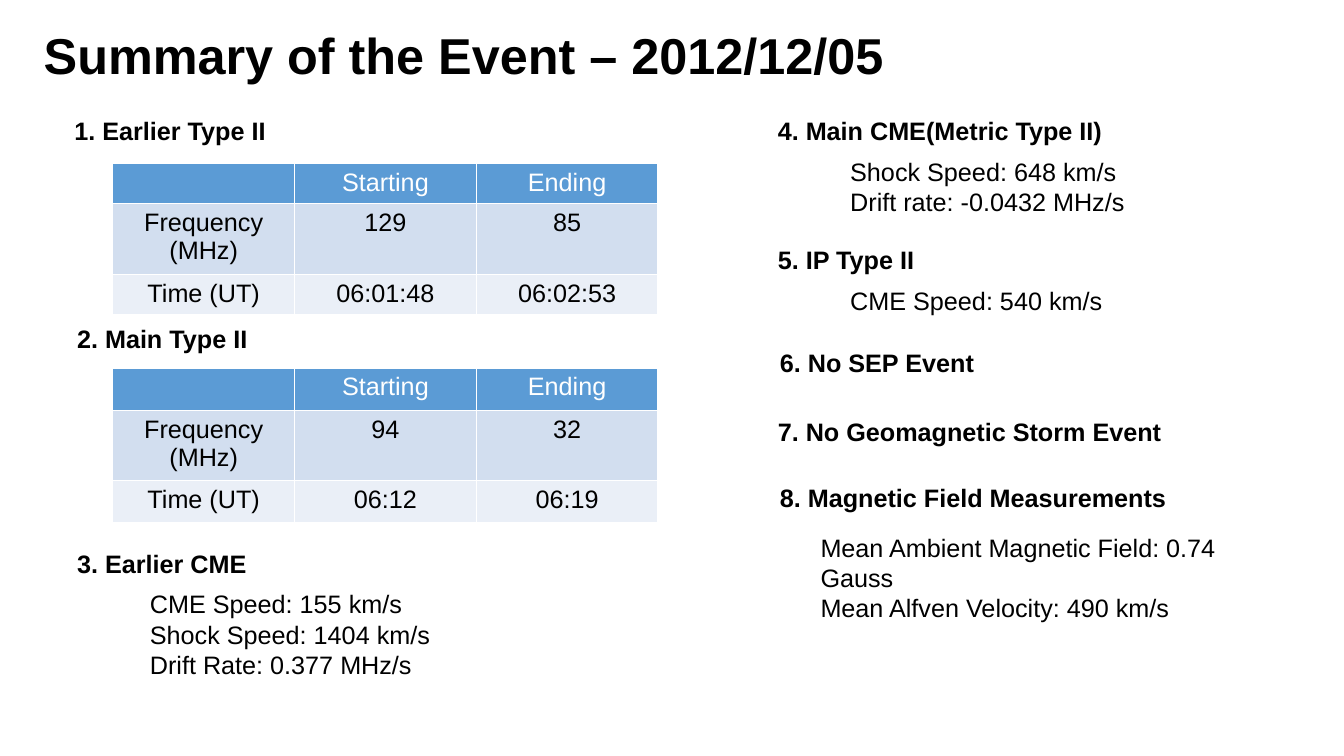
"""Build the event summary slide with its two measurement tables."""
from dataclasses import dataclass

from pptx import Presentation
from pptx.dml.color import RGBColor
from pptx.enum.text import MSO_ANCHOR, MSO_AUTO_SIZE, PP_ALIGN
from pptx.util import Pt

TOP = MSO_ANCHOR.TOP
GROW = MSO_AUTO_SIZE.SHAPE_TO_FIT_TEXT
LEFT = PP_ALIGN.LEFT
CENTER = PP_ALIGN.CENTER
TITLE_ONLY = 5


@dataclass(frozen=True)
class Theme:
    """Colours, font and type sizes of the slide."""
    font: str = "Arial"
    title_size: float = 36
    body_size: float = 18
    ink: RGBColor = RGBColor(0, 0, 0)
    header_ink: RGBColor = RGBColor(255, 255, 255)
    row_fills: tuple = (
        RGBColor(0x5B, 0x9B, 0xD5),
        RGBColor(0xD2, 0xDE, 0xEF),
        RGBColor(0xEA, 0xEF, 0xF7),
    )


class SummaryPage:
    """Place styled elements on one slide, with lengths in points."""

    def __init__(self, deck, theme):
        self.theme = theme
        self.page = deck.slides.add_slide(deck.slide_layouts[TITLE_ONLY])

    def style(self, frame, size, bold, color, align):
        """Format every run of a text frame."""
        for para in frame.paragraphs:
            para.alignment = align
            for span in para.runs:
                span.font.name = self.theme.font
                span.font.size = Pt(size)
                span.font.bold = bold
                span.font.color.rgb = color

    def fill_box(self, box, text, size, bold):
        """Put left-aligned text into a wrapping box."""
        frame = box.text_frame
        frame.text = text
        frame.word_wrap = True
        frame.auto_size = GROW
        frame.vertical_anchor = TOP
        self.style(frame, size, bold, self.theme.ink, LEFT)

    def title(self, text, left, top, width, height):
        """Move and fill the title placeholder."""
        box = self.page.shapes.title
        box.left, box.top = Pt(left), Pt(top)
        box.width, box.height = Pt(width), Pt(height)
        self.fill_box(box, text, self.theme.title_size, True)

    def heading(self, text, left, top):
        """Add a bold numbered heading."""
        box = self.page.shapes.add_textbox(Pt(left), Pt(top), Pt(296), Pt(29))
        self.fill_box(box, text, self.theme.body_size, True)

    def details(self, lines, left, top):
        """Add the plain lines that belong to a heading."""
        height = 7.2 + 21.8 * len(lines)
        box = self.page.shapes.add_textbox(Pt(left), Pt(top), Pt(348), Pt(height))
        self.fill_box(box, "\n".join(lines), self.theme.body_size, False)

    def table(self, rows, left, top, width, heights):
        """Add a table with a header row and tinted body rows."""
        columns = len(rows[0])
        table = self.page.shapes.add_table(
            len(rows), columns, Pt(left), Pt(top), Pt(width), Pt(sum(heights))
        ).table
        for column in table.columns:
            column.width = Pt(width / columns)
        for index, (values, height) in enumerate(zip(rows, heights)):
            table.rows[index].height = Pt(height)
            color = self.theme.ink if index else self.theme.header_ink
            for cell, value in zip(table.rows[index].cells, values):
                cell.fill.solid()
                cell.fill.fore_color.rgb = self.theme.row_fills[index]
                cell.text_frame.text = value
                self.style(cell.text_frame, self.theme.body_size, False, color, CENTER)


HEADINGS = [
    ("1. Earlier Type II", 46, 78.6),
    ("2. Main Type II", 48, 227.5),
    ("3. Earlier CME", 48, 388),
    ("4. Main CME(Metric Type II)", 548.5, 78.6),
    ("5. IP Type II", 548.5, 171),
    ("6. No SEP Event", 550, 244.6),
    ("7. No Geomagnetic Storm Event", 548.5, 293.8),
    ("8. Magnetic Field Measurements", 550, 340.8),
]
DETAILS = [
    (["CME Speed: 155 km/s", "Shock Speed: 1404 km/s", "Drift Rate: 0.377 MHz/s"], 100, 417),
    (["Shock Speed: 648 km/s", "Drift rate: -0.0432 MHz/s"], 600.2, 108),
    (["CME Speed: 540 km/s"], 600.2, 200.2),
    (["Mean Ambient Magnetic Field: 0.74 Gauss", "Mean Alfven Velocity: 490 km/s"], 579, 376.6),
]
TABLES = [
    (("129", "85"), ("06:01:48", "06:02:53"), 116.5, (29, 50, 29)),
    (("94", "32"), ("06:12", "06:19"), 262.8, (30.2, 50.4, 30.2)),
]


def main():
    """Build and save the deck."""
    deck = Presentation()
    deck.slide_width, deck.slide_height = Pt(960), Pt(540)
    summary = SummaryPage(deck, Theme())
    summary.title("Summary of the Event – 2012/12/05", 24, 13.7, 640, 51)
    for text, left, top in HEADINGS:
        summary.heading(text, left, top)
    for frequencies, times, top, heights in TABLES:
        rows = [
            ("", "Starting", "Ending"),
            ("Frequency (MHz)", *frequencies),
            ("Time (UT)", *times),
        ]
        summary.table(rows, 80.6, top, 389.4, heights)
    for lines, left, top in DETAILS:
        summary.details(lines, left, top)
    deck.save("out.pptx")


if __name__ == "__main__":
    main()
